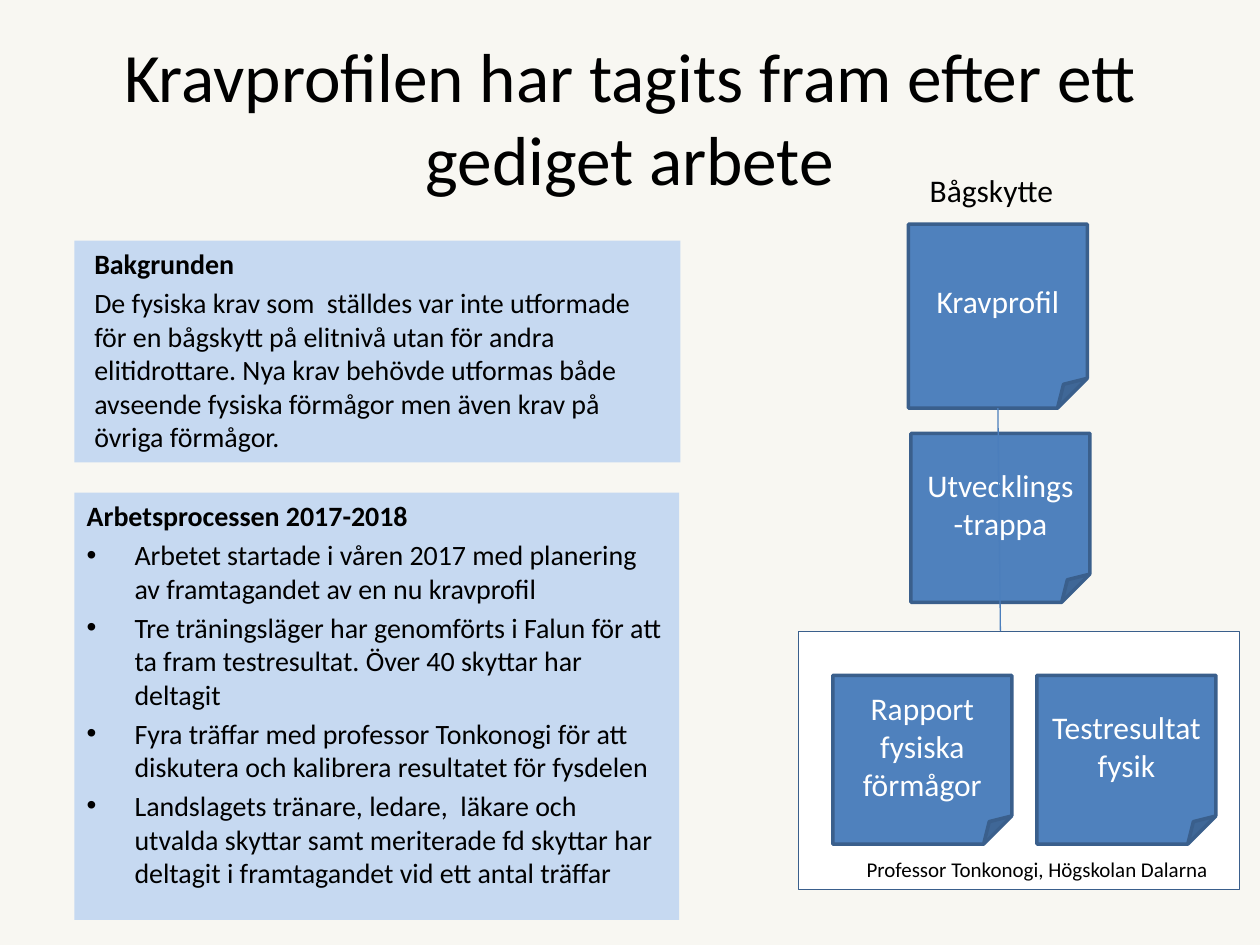
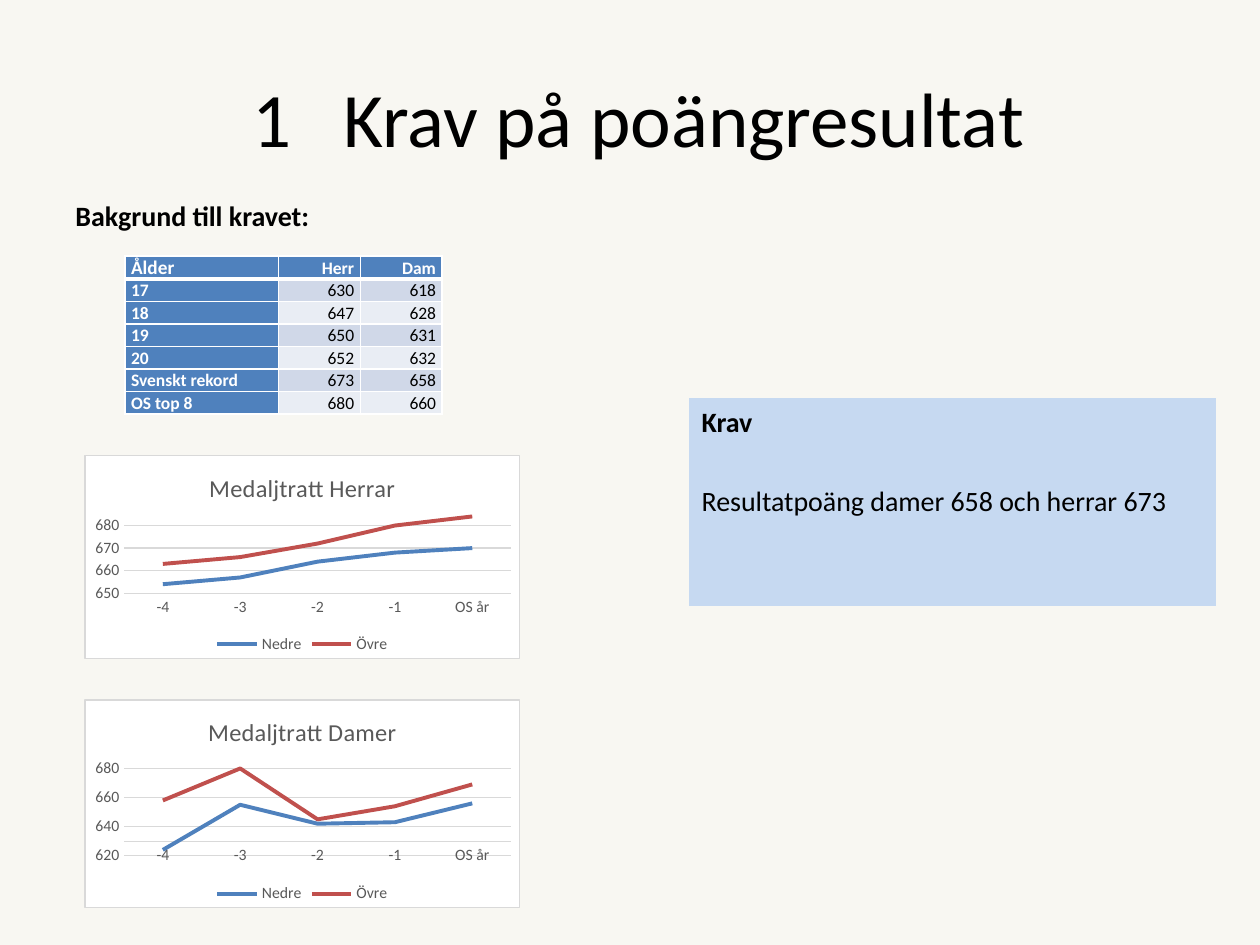
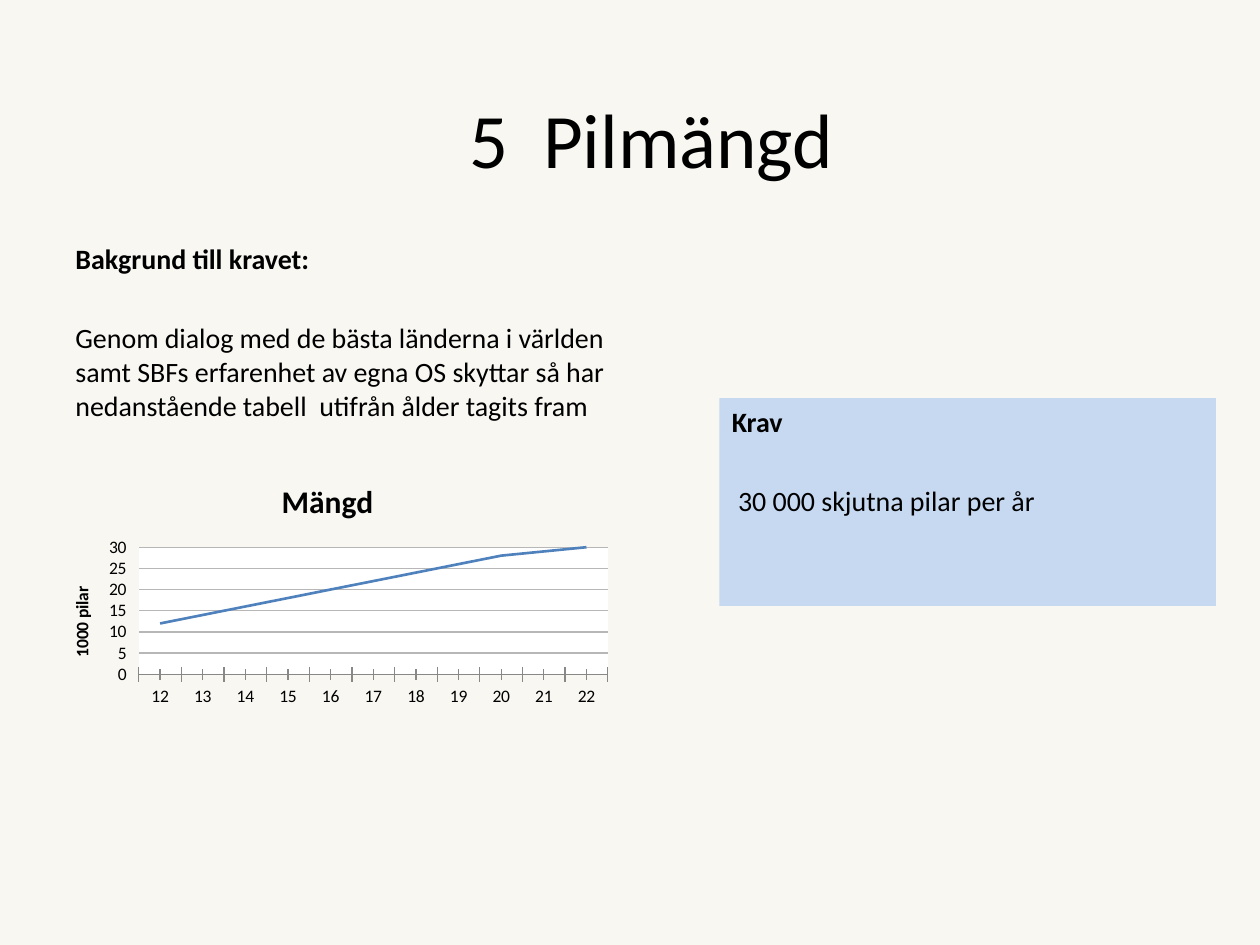
from dataclasses import dataclass
from typing import Optional

from lxml.etree import SubElement
from pptx import Presentation
from pptx.chart.data import CategoryChartData
from pptx.dml.color import RGBColor
from pptx.enum.chart import XL_CHART_TYPE as Kind
from pptx.enum.chart import XL_LEGEND_POSITION as Spot
from pptx.enum.chart import XL_TICK_MARK as Tick
from pptx.enum.shapes import MSO_CONNECTOR as Link
from pptx.enum.shapes import MSO_SHAPE as Form
from pptx.enum.text import MSO_ANCHOR as Anchor
from pptx.enum.text import PP_ALIGN as Align
from pptx.oxml import parse_xml
from pptx.oxml.ns import nsdecls, qn
from pptx.util import Inches, Pt

FONT = "Calibri"
HEX = {
    "page": "F8F7F2", "panel": "C6D9F1", "blue": "4F81BD", "edge": "3A5F8C",
    "link": "4B7EBC", "red": "C0504D", "white": "FFFFFF", "black": "000000",
    "grey": "595959", "grid": "D9D9D9", "rule": "B7B7B7", "axis": "888888",
    "odd": "D0D8E8", "even": "E9EDF4",
}


@dataclass
class Area:
    x: float
    y: float
    w: float
    h: float

    def size(self) -> tuple:
        return Inches(self.x), Inches(self.y), Inches(self.w), Inches(self.h)


@dataclass
class Para:
    text: str
    size: float = 16
    bold: bool = False
    color: str = "black"
    align: Align = Align.LEFT
    gap: float = 3
    indent: float = 0
    bullet: bool = False


@dataclass
class Graph:
    title: str
    area: Area
    plot: Area
    cats: list
    rows: dict
    low: float
    high: float
    step: float
    cross: float
    framed: bool = True
    unit: Optional[str] = None


def tint(name: str) -> RGBColor:
    return RGBColor.from_string(HEX[name])


def style(font, size: float, color: str = "black", bold: bool = False) -> None:
    font.name = FONT
    font.size = Pt(size)
    font.bold = bold
    font.color.rgb = tint(color)


def paint(fill, name: str) -> None:
    fill.solid()
    fill.fore_color.rgb = tint(name)


def stroke(line, name: str, width: float) -> None:
    line.color.rgb = tint(name)
    line.width = Pt(width)


def write(frame, paras: list) -> None:
    for i, item in enumerate(paras):
        para = frame.paragraphs[0] if i == 0 else frame.add_paragraph()
        para.text = item.text
        para.alignment = item.align
        para.space_before = Pt(item.gap)
        style(para.font, item.size, item.color, item.bold)
        props = para._p.get_or_add_pPr()
        props.set("marL", str(Inches(item.indent)))
        if item.bullet:
            props.set("indent", str(-Inches(item.indent)))
            SubElement(props, qn("a:buFont"), typeface="Arial")
            SubElement(props, qn("a:buChar"), char="•")


def add_text(slide, area: Area, paras: list, fill: Optional[str] = None,
             anchor: Anchor = Anchor.TOP, wrap: bool = True) -> None:
    box = slide.shapes.add_textbox(*area.size())
    if fill:
        paint(box.fill, fill)
    box.text_frame.word_wrap = wrap
    box.text_frame.vertical_anchor = anchor
    write(box.text_frame, paras)


def add_title(slide, text: str, size: float = 44, x: float = 0.5, y: float = 0.3) -> None:
    para = Para(text, size, align=Align.CENTER, gap=0)
    add_text(slide, Area(x, y, 9, 1.25), [para], anchor=Anchor.MIDDLE)


def add_form(slide, form: Form, area: Area, fill: str, width: float, lines: list) -> None:
    shape = slide.shapes.add_shape(form, *area.size())
    shape.shadow.inherit = False
    paint(shape.fill, fill)
    stroke(shape.line, "edge", width)
    shape.text_frame.vertical_anchor = Anchor.MIDDLE
    write(shape.text_frame,
          [Para(line, 18, color="white", align=Align.CENTER, gap=0) for line in lines])


def add_link(slide, x1: float, y1: float, x2: float, y2: float) -> None:
    link = slide.shapes.add_connector(
        Link.STRAIGHT, Inches(x1), Inches(y1), Inches(x2), Inches(y2))
    stroke(link.line, "link", 0.75)
    SubElement(link.element.find(qn("p:spPr")), qn("a:effectLst"))


def add_edges(cell, last: float) -> None:
    props = cell._tc.get_or_add_tcPr()
    for i, (side, width) in enumerate(zip("LRTB", (1, 1, 1, last))):
        props.insert(i, parse_xml(
            f'<a:ln{side} {nsdecls("a")} w="{Pt(width)}"><a:solidFill>'
            f'<a:srgbClr val="{HEX["white"]}"/></a:solidFill></a:ln{side}>'))


def add_grid(slide, area: Area, widths: list, rows: list) -> None:
    table = slide.shapes.add_table(len(rows), len(widths), *area.size()).table
    for col, width in zip(table.columns, widths):
        col.width = Inches(width)
    for r, row in enumerate(rows):
        table.rows[r].height = Inches(area.h / len(rows))
        for c, text in enumerate(row):
            cell = table.cell(r, c)
            head = r == 0 or c == 0
            paint(cell.fill, "blue" if head else "odd" if r % 2 else "even")
            add_edges(cell, 3 if r == 0 else 1)
            cell.margin_left = cell.margin_right = Inches(0.05)
            cell.margin_top = cell.margin_bottom = 0
            cell.vertical_anchor = Anchor.BOTTOM
            write(cell.text_frame, [Para(
                text, 11 if r == c == 0 else 10, head, "white" if head else "black",
                Align.RIGHT if c else Align.LEFT, 0)])


def place_plot(chart, plot: Area) -> None:
    area = chart.element.find(".//" + qn("c:plotArea"))
    for old in area.findall(qn("c:layout")):
        area.remove(old)
    layout = parse_xml(f'<c:layout {nsdecls("c")}><c:manualLayout/></c:layout>')
    marks = {"layoutTarget": "inner", "xMode": "edge", "yMode": "edge",
             "x": plot.x, "y": plot.y, "w": plot.w, "h": plot.h}
    for name, value in marks.items():
        SubElement(layout[0], qn("c:" + name), val=str(value))
    area.insert(0, layout)


def fill_chart(chart, framed: bool) -> None:
    white = f'<a:solidFill><a:srgbClr val="{HEX["white"]}"/></a:solidFill>'
    empty = "<a:noFill/>"
    edge = (f'<a:ln w="{Pt(0.75)}"><a:solidFill><a:srgbClr val="{HEX["grid"]}"/>'
            "</a:solidFill></a:ln>")
    blank = f"<a:ln>{empty}</a:ln>"
    outer, inner = (white + edge, empty + blank) if framed else (empty + blank, white + blank)
    part = '<c:spPr {}>{}</c:spPr>'
    body = chart.element.find(qn("c:chart"))
    body.addnext(parse_xml(part.format(nsdecls("c", "a"), outer)))
    body.find(qn("c:plotArea")).append(parse_xml(part.format(nsdecls("c", "a"), inner)))


def add_graph(slide, graph: Graph) -> None:
    data = CategoryChartData(number_format="General")
    data.categories = graph.cats
    for name, values in graph.rows.items():
        data.add_series(name, values)
    chart = slide.shapes.add_chart(Kind.LINE, *graph.area.size(), data).chart
    framed = graph.framed
    ink = "grey" if framed else "black"
    style(chart.font, 10)
    chart.has_title = True
    chart.chart_title.include_in_layout = False
    write(chart.chart_title.text_frame,
          [Para(graph.title, 14 if framed else 18, not framed, ink, Align.CENTER, 0)])
    chart.has_legend = framed
    if framed:
        chart.legend.position = Spot.BOTTOM
        chart.legend.include_in_layout = False
        style(chart.legend.font, 9, ink)
    cat, val = chart.category_axis, chart.value_axis
    for axis in (cat, val):
        style(axis.tick_labels.font, 9 if framed else 10, ink)
        axis.major_tick_mark = axis.minor_tick_mark = Tick.NONE if framed else Tick.CROSS
    stroke(cat.format.line, "grid" if framed else "axis", 0.75)
    val.format.line.fill.background()
    val.minimum_scale, val.maximum_scale = graph.low, graph.high
    val.major_unit = graph.step
    val.crosses_at = graph.cross
    val.has_major_gridlines = True
    stroke(val.major_gridlines.format.line, "grid" if framed else "rule", 0.75)
    val.tick_labels.number_format = "General" if framed else "#,##0"
    val.tick_labels.number_format_is_linked = False
    if graph.unit:
        val.has_title = True
        write(val.axis_title.text_frame,
              [Para(graph.unit, 10, True, align=Align.CENTER, gap=0)])
    chart.plots[0].vary_by_categories = False
    for row, name in zip(chart.plots[0].series, ("blue", "red")):
        row.smooth = False
        stroke(row.format.line, name, 2.25 if framed else 1.5)
    place_plot(chart, graph.plot)
    fill_chart(chart, framed)


def add_need(slide, x: float, text: str) -> None:
    add_text(slide, Area(x, 3.16, 9.65 - x, 1.65),
             [Para("Krav", bold=True), Para(text, gap=26)], "panel")


def add_page(deck):
    slide = deck.slides.add_slide(deck.slide_layouts[6])
    paint(slide.background.fill, "page")
    return slide


def draw_work(deck) -> None:
    slide = add_page(deck)
    add_form(slide, Form.RECTANGLE, Area(6.34, 5.01, 3.5, 2.05), "white", 0.75, [])
    add_title(slide, "Kravprofilen har tagits fram efter ett gediget arbete", 39.6)
    steps = [
        "Arbetet startade i våren 2017 med planering av framtagandet av en nu kravprofil",
        "Tre träningsläger har genomförts i Falun för att ta fram testresultat. "
        "Över 40 skyttar har deltagit",
        "Fyra träffar med professor Tonkonogi för att diskutera och kalibrera "
        "resultatet för fysdelen",
        "Landslagets tränare, ledare,  läkare och utvalda skyttar samt meriterade fd "
        "skyttar har deltagit i framtagandet vid ett antal träffar",
    ]
    add_text(slide, Area(0.59, 3.91, 4.8, 3.39),
             [Para("Arbetsprocessen 2017-2018", bold=True)]
             + [Para(step, indent=0.38, bullet=True) for step in steps], "panel")
    add_text(slide, Area(0.59, 1.91, 4.81, 1.76), [
        Para("Bakgrunden", bold=True, indent=0.06),
        Para("De fysiska krav som  ställdes var inte utformade för en bågskytt på "
             "elitnivå utan för andra elitidrottare. Nya krav behövde utformas både "
             "avseende fysiska förmågor men även krav på övriga förmågor.", indent=0.06),
    ], "panel")
    notes = [
        (7.21, 1.78, 1.46, ["Kravprofil"]),
        (7.23, 3.44, 1.34, ["Utvecklings-trappa"]),
        (8.23, 5.36, 1.34, ["Testresultat", "fysik"]),
        (6.61, 5.36, 1.34, ["Rapport fysiska förmågor"]),
    ]
    for x, y, h, lines in notes:
        add_form(slide, Form.FOLDED_CORNER, Area(x, y, 1.42, h), "blue", 2, lines)
    add_text(slide, Area(6.78, 6.75, 2.94, 0.3),
             [Para("Professor Tonkonogi, Högskolan Dalarna", 12, gap=0)], wrap=False)
    add_link(slide, 7.92, 3.24, 7.94, 5.01)
    add_text(slide, Area(7.28, 1.31, 1.19, 0.4), [Para("Bågskytte", 18, gap=0)], wrap=False)


def draw_score(deck) -> None:
    slide = add_page(deck)
    add_title(slide, " 1   Krav på poängresultat")
    add_text(slide, Area(0.5, 1.53, 4.42, 4.95), [Para("Bakgrund till kravet:", bold=True)])
    add_need(slide, 5.47, "Resultatpoäng damer 658 och herrar 673")
    add_grid(slide, Area(0.99, 2.03, 2.53, 1.25), [1.22, 0.65, 0.65], [
        ("Ålder", "Herr", "Dam"),
        ("17", "630", "618"),
        ("18", "647", "628"),
        ("19", "650", "631"),
        ("20", "652", "632"),
        ("Svenskt rekord", "673", "658"),
        ("OS top 8", "680", "660"),
    ])
    years = ["-4", "-3", "-2", "-1", "OS år"]
    add_graph(slide, Graph(
        "Medaljtratt Herrar", Area(0.67, 3.61, 3.46, 1.62), Area(0.09, 0.29, 0.89, 0.39),
        years, {"Nedre": [654, 657, 664, 668, 670], "Övre": [663, 666, 672, 680, 684]},
        650, 685, 10, 650))
    add_graph(slide, Graph(
        "Medaljtratt Damer", Area(0.67, 5.55, 3.46, 1.66), Area(0.09, 0.33, 0.89, 0.42),
        years, {"Nedre": [624, 655, 642, 643, 656], "Övre": [658, 680, 645, 654, 669]},
        620, 680, 20, 630))


def draw_arrows(deck) -> None:
    slide = add_page(deck)
    add_text(slide, Area(0.5, 1.87, 4.42, 4.95), [
        Para("Bakgrund till kravet:", bold=True),
        Para("Genom dialog med de bästa länderna i världen samt SBFs erfarenhet av egna "
             "OS skyttar så har nedanstående tabell  utifrån ålder tagits fram", gap=26),
    ])
    add_need(slide, 5.71, " 30 000 skjutna pilar per år")
    add_title(slide, "5  Pilmängd", x=0.67, y=0.47)
    add_graph(slide, Graph(
        "Mängd", Area(0.33, 3.67, 4.54, 1.98), Area(0.17, 0.34, 0.82, 0.51),
        [str(age) for age in range(12, 23)],
        {"Series 1": [*range(12, 29, 2), 29, 30]}, 0, 30, 5, 0, False, "1000 pilar"))


def main() -> None:
    deck = Presentation()
    deck.slide_width, deck.slide_height = Inches(10), Inches(7.5)
    for draw in (draw_work, draw_score, draw_arrows):
        draw(deck)
    deck.save("out.pptx")


if __name__ == "__main__":
    main()
